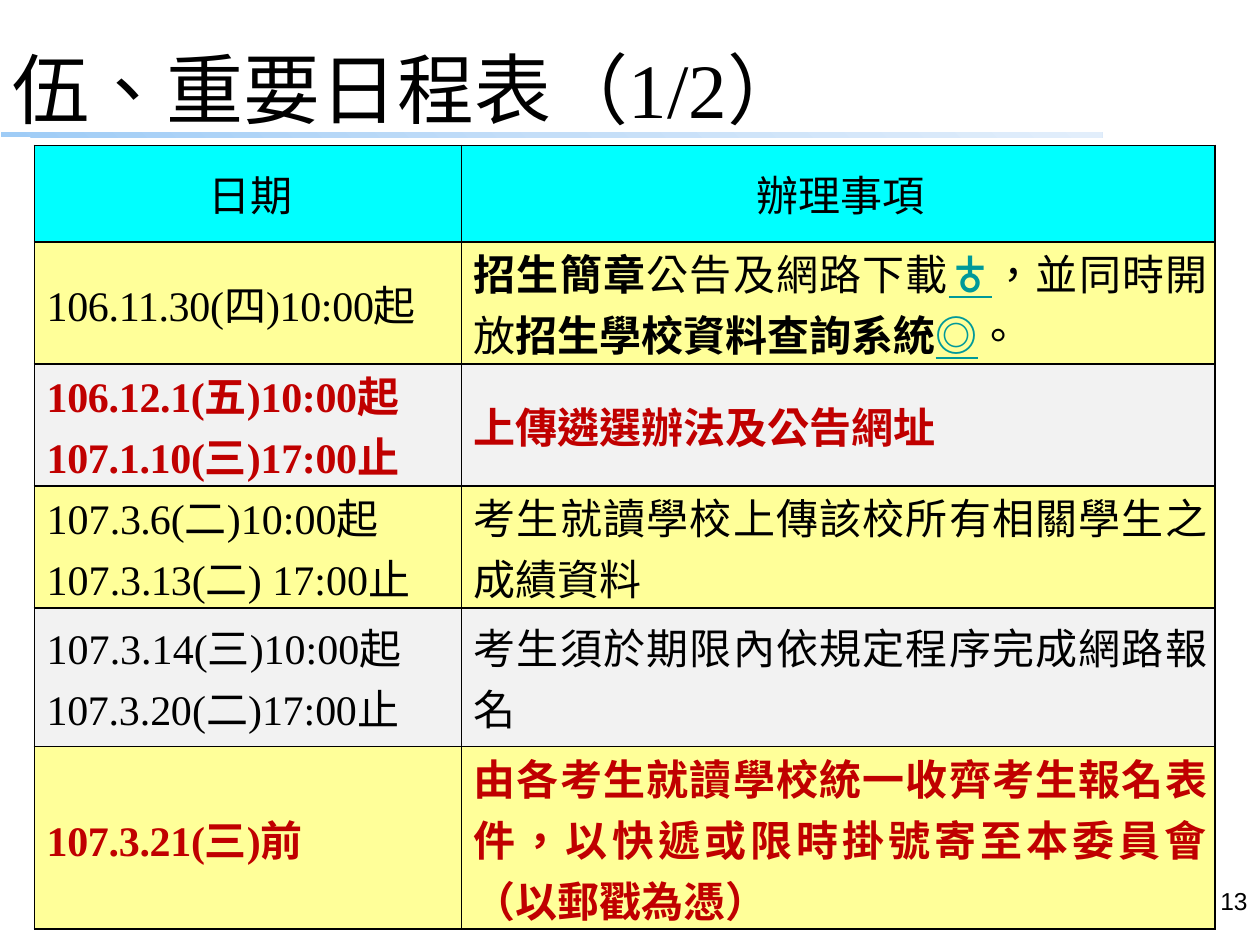
import pptx
import pptx.util
import pptx.dml.color
import pptx.enum.shapes
import pptx.enum.text
import pptx.oxml
import pptx.oxml.ns
from lxml import etree

Pt = pptx.util.Pt
ALIGN = pptx.enum.text.PP_ALIGN
COLORS = {
    "text": "000000", "red": "C00000", "link": "009999", "border": "000000",
    "header": "00FFFF", "yellow": "FFFF99", "gray": "F2F2F2",
    "bar_start": "9FCCF6", "bar_middle": "C4DEF8", "bar_end": "E2EEFB",
}
SERIF = "Times New Roman"
STYLES = {
    "plain": {},
    "bold": {"bold": True},
    "link": {"bold": True, "underline": True, "color": "link", "name": "Noto Sans CJK SC"},
    "tight": {"tracking": -20},
    "tighter": {"tracking": -50},
    "red": {"bold": True, "color": "red"},
    "red tight": {"bold": True, "color": "red", "tracking": -20},
}
COLUMNS = [244, 430.5]
ROWS = [
    (55.4, "header", ALIGN.CENTER, [[("日期", "plain")]], [("辦理事項", "plain")]),
    (69.5, "yellow", ALIGN.LEFT, [[("106.11.30(四)10:00起", "tight")]],
     [("招生簡章", "bold"), ("公告及網路下載", "plain"), ("♁", "link"), ("，並同時開放", "plain"),
      ("招生學校資料查詢系統", "bold"), ("◎", "link"), ("。", "plain")]),
    (69.5, "gray", ALIGN.LEFT,
     [[("106.12.1(五)10:00起", "red tight")], [("107.1.10(三)17:00止", "red tight")]],
     [("上傳遴選辦法及公告網址", "red")]),
    (69.5, "yellow", ALIGN.JUSTIFY,
     [[("107.", "plain"), ("3.6", "tighter"), ("(二)10:00起", "plain")],
      [("107.3", "plain"), (".13", "tighter"), ("(二) 17:00止", "plain")]],
     [("考生就讀學校上傳該校所有相關學生之成績資料", "plain")]),
    (79.2, "gray", ALIGN.JUSTIFY,
     [[("107.3", "plain"), (".", "tighter"), ("14(三)10:00起", "plain")],
      [("107.3", "tight"), (".", "tighter"), ("20", "tight"), ("(二)", "plain"),
       ("17", "tight"), (":", "plain"), ("00止", "tight")]],
     [("考生須於期限內依規定程序完成網路報名", "plain")]),
    (104.4, "yellow", ALIGN.JUSTIFY, [[("107.3.21(三)前", "red tight")]],
     [("由各考生就讀學校統一收齊考生報名表件，以快遞或限時掛號寄至本委員會（以郵戳為憑）", "red")]),
]


def format_run(run, size, name=SERIF, color="text", bold=False, underline=False, tracking=0):
    """Set the font, language and letter spacing of a run."""
    run.font.size = Pt(size)
    run.font.name = name
    run.font.bold = bold
    run.font.underline = underline
    run.font.color.rgb = pptx.dml.color.RGBColor.from_string(COLORS[color])
    properties = run._r.get_or_add_rPr()
    properties.set("lang", "zh-TW")
    properties.set("spc", str(tracking))


def add_label(slide, box, text, size, name, alignment):
    """Place a one-line text box."""
    shape = slide.shapes.add_textbox(*map(Pt, box))
    shape.text_frame.word_wrap = True
    shape.text_frame.text = text
    paragraph = shape.text_frame.paragraphs[0]
    paragraph.alignment = alignment
    format_run(paragraph.runs[0], size, name)


def add_bar(slide, box):
    """Place the gradient bar under the title."""
    shape = slide.shapes.add_shape(pptx.enum.shapes.MSO_SHAPE.RECTANGLE, *map(Pt, box))
    shape.shadow.inherit = False
    shape.line.fill.background()
    stops = "".join(
        f'<a:gs pos="{position}"><a:srgbClr val="{COLORS[key]}"/></a:gs>'
        for position, key in ((0, "bar_start"), (50000, "bar_middle"), (100000, "bar_end")))
    gradient = pptx.oxml.parse_xml(
        f'<a:gradFill {pptx.oxml.ns.nsdecls("a")}><a:gsLst>{stops}</a:gsLst>'
        '<a:lin ang="18900000" scaled="0"/></a:gradFill>')
    shape._element.spPr.find(pptx.oxml.ns.qn("a:prstGeom")).addnext(gradient)


def add_borders(cell):
    """Draw a thin line on all four sides of a cell."""
    properties = cell._tc.get_or_add_tcPr()
    for index, side in enumerate(("lnL", "lnR", "lnT", "lnB")):
        line = etree.Element(pptx.oxml.ns.qn(f"a:{side}"), w=str(Pt(1)))
        fill = etree.SubElement(line, pptx.oxml.ns.qn("a:solidFill"))
        etree.SubElement(fill, pptx.oxml.ns.qn("a:srgbClr"), val=COLORS["border"])
        properties.insert(index, line)


def fill_cell(cell, paragraphs, fill, alignment):
    """Write styled paragraphs into a cell and set its look."""
    cell.fill.solid()
    cell.fill.fore_color.rgb = pptx.dml.color.RGBColor.from_string(COLORS[fill])
    cell.vertical_anchor = pptx.enum.text.MSO_ANCHOR.MIDDLE
    cell.margin_left = Pt(1.4)
    cell.margin_right = Pt(4.2)
    cell.margin_top = cell.margin_bottom = Pt(0)
    add_borders(cell)
    cell.text_frame.text = "\n".join("".join(text for text, _ in runs) for runs in paragraphs)
    for paragraph, runs in zip(cell.text_frame.paragraphs, paragraphs):
        paragraph.alignment = alignment
        properties = paragraph._p.get_or_add_pPr()
        properties.set("marL", str(Pt(5.6)))
        properties.set("indent", "0")
        paragraph.runs[0].text = runs[0][0]
        for text, _ in runs[1:]:
            paragraph.add_run().text = text
        for run, (_, style) in zip(paragraph.runs, runs):
            format_run(run, 24, **STYLES[style])


def add_schedule(slide, left, top):
    """Place the table of dates and tasks."""
    height = sum(row[0] for row in ROWS)
    frame = slide.shapes.add_table(
        len(ROWS), len(COLUMNS), Pt(left), Pt(top), Pt(sum(COLUMNS)), Pt(height))
    table = frame.table
    table.horz_banding = False
    for column, width in zip(table.columns, COLUMNS):
        column.width = Pt(width)
    for index, (row_height, fill, alignment, dates, task) in enumerate(ROWS):
        table.rows[index].height = Pt(row_height)
        task_alignment = ALIGN.CENTER if fill == "header" else ALIGN.JUSTIFY
        fill_cell(table.cell(index, 0), dates, fill, alignment)
        fill_cell(table.cell(index, 1), [task], fill, task_alignment)


def main():
    """Build the schedule slide and save it."""
    presentation = pptx.Presentation()
    presentation.slide_width, presentation.slide_height = Pt(720), Pt(540)
    slide = presentation.slides.add_slide(presentation.slide_layouts[6])
    add_bar(slide, (0.7, 75.6, 629.3, 3))
    add_schedule(slide, 19.7, 83)
    add_label(slide, (552, 502.5, 168, 37.5), "13", 14, "Arial", ALIGN.RIGHT)
    add_label(slide, (0, 20, 700.5, 49.5), "伍、重要日程表（1/2）", 44, SERIF, ALIGN.LEFT)
    presentation.save("out.pptx")


if __name__ == "__main__":
    main()
